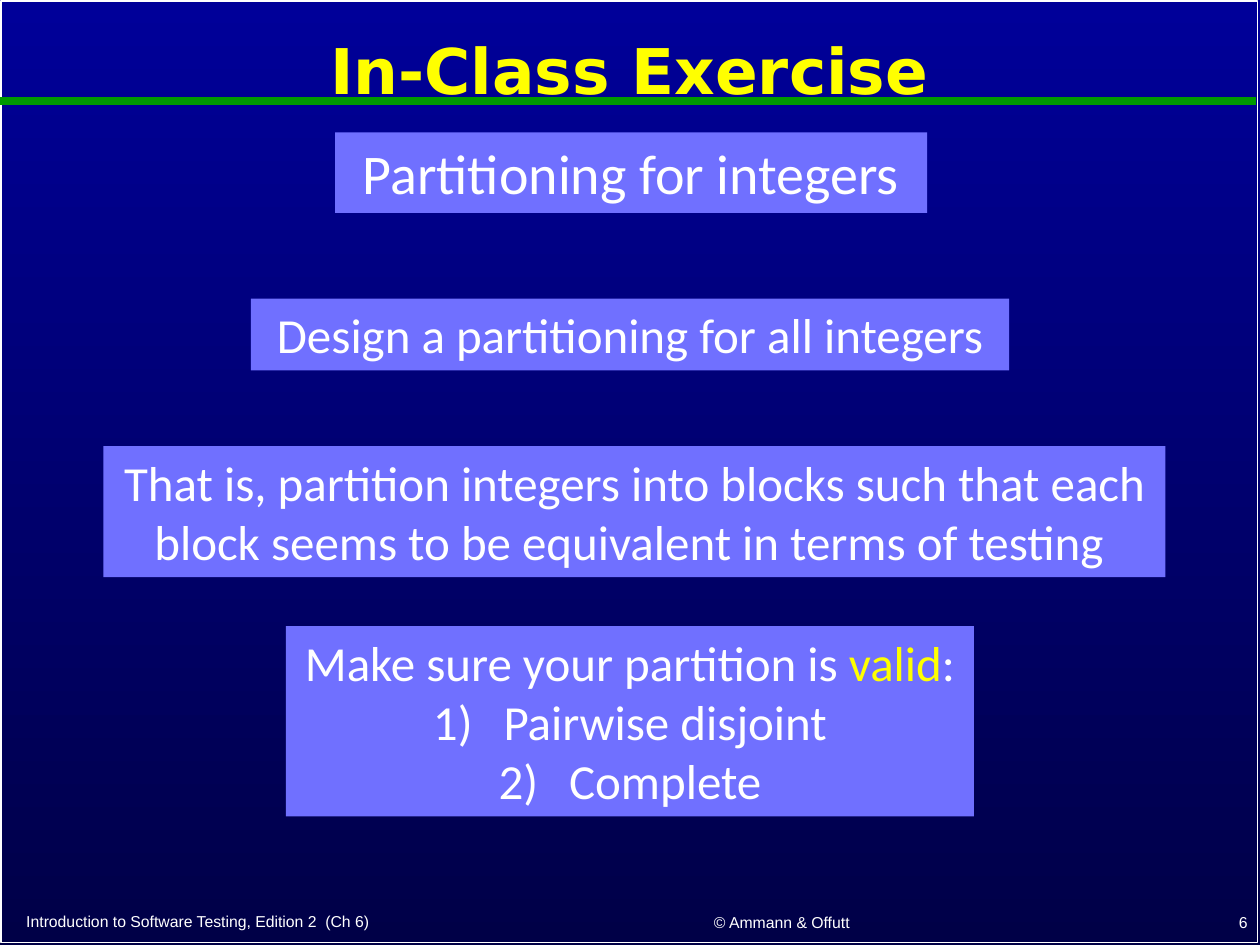
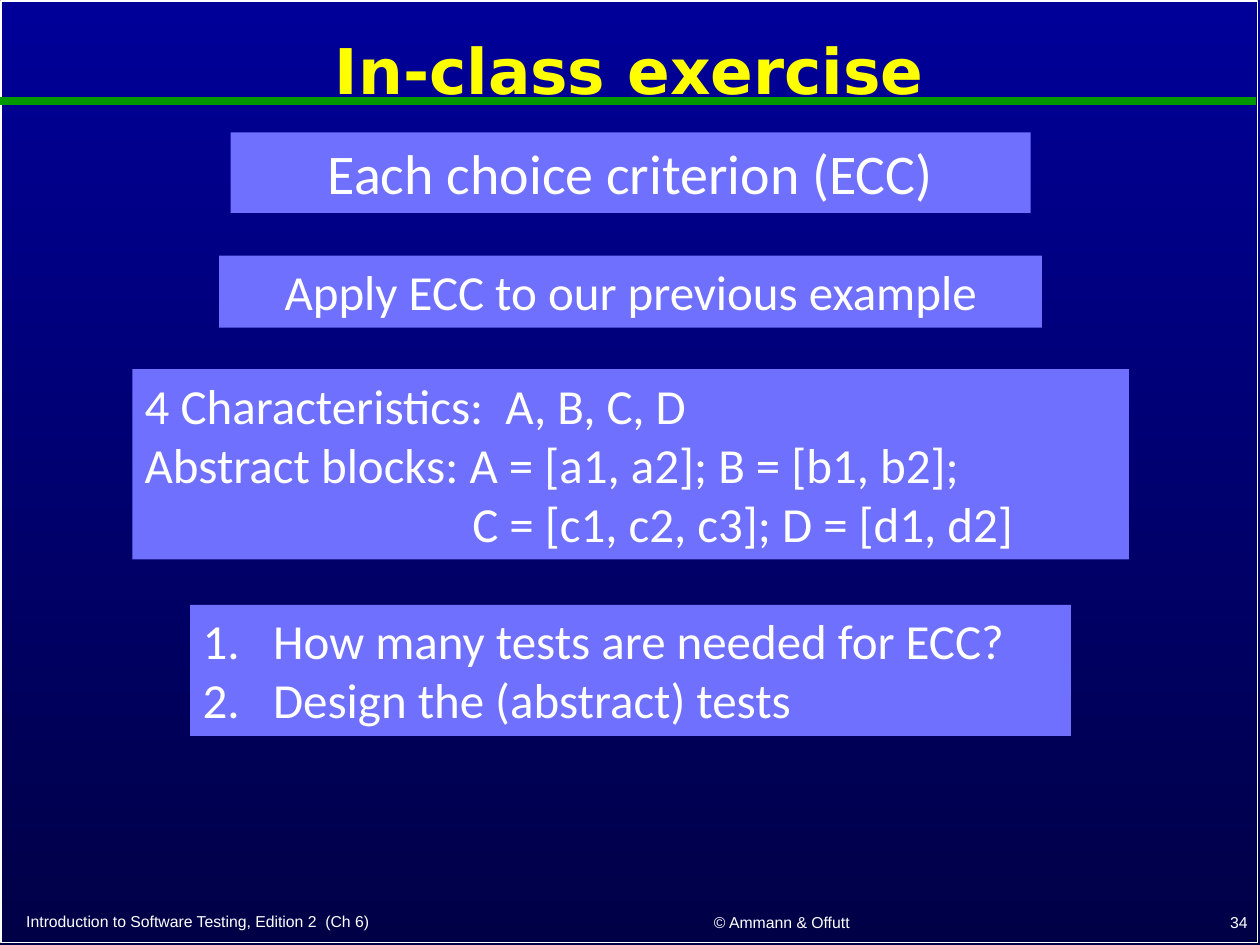
from lxml.etree import SubElement
from pptx import Presentation
from pptx.dml.color import RGBColor
from pptx.enum.shapes import MSO_CONNECTOR, MSO_SHAPE
from pptx.enum.text import MSO_ANCHOR, MSO_AUTO_SIZE, PP_ALIGN
from pptx.oxml.ns import qn
from pptx.util import Inches, Pt

WHITE, YELLOW, GREEN, PANEL = "FFFFFF", "FFFF00", "009900", "7070FF"
NIGHT = ("000099", "000047")
LEFT, CENTER, RIGHT = PP_ALIGN.LEFT, PP_ALIGN.CENTER, PP_ALIGN.RIGHT
HANG = 0.56
FOOTERS = (
    ("Introduction to Software Testing, Edition 2  (Ch 6)",
     (0.11, 7.18, 4.31, 0.26), LEFT),
    ("© Ammann & Offutt", (4.62, 7.17, 3.17, 0.27), CENTER),
)


def paint(color, code):
    color.rgb = RGBColor.from_string(code)


def inches(box):
    return [Inches(side) for side in box]


def write(frame, lines, size=28, font="Calibri", color=WHITE, bold=False,
          align=CENTER, accent=None, anchor=MSO_ANCHOR.TOP):
    """Fill a text frame; the accent word in any line turns yellow."""
    frame.word_wrap = True
    frame.vertical_anchor = anchor
    for i, line in enumerate(lines):
        para = frame.add_paragraph() if i else frame.paragraphs[0]
        para.alignment = align
        for part in line.partition(accent) if accent else (line,):
            if part:
                run = para.add_run()
                run.text = part
                run.font.size, run.font.name = Pt(size), font
                run.font.bold = bold
                paint(run.font.color, YELLOW if part == accent else color)


def indent(para, left, first=0):
    props = para._p.get_or_add_pPr()
    props.set("marL", str(Inches(left)))
    props.set("indent", str(Inches(first)))
    return props


def number(paras, style):
    for para in paras:
        props = indent(para, HANG, -HANG)
        paint_bullet = SubElement(props, qn("a:buFont"))
        paint_bullet.set("typeface", "Calibri")
        SubElement(props, qn("a:buAutoNum")).set("type", style)


def panel(slide, box, *lines, **form):
    shape = slide.shapes.add_shape(MSO_SHAPE.RECTANGLE, *inches(box))
    shape.shadow.inherit = False
    shape.fill.solid()
    paint(shape.fill.fore_color, PANEL)
    shape.line.fill.background()
    frame = shape.text_frame
    write(frame, lines, **form)
    frame.auto_size = MSO_AUTO_SIZE.SHAPE_TO_FIT_TEXT
    return frame.paragraphs


def border(slide, box):
    edge = slide.shapes.add_shape(MSO_SHAPE.RECTANGLE, *inches(box))
    edge.shadow.inherit = False
    edge.fill.background()
    paint(edge.line.color, WHITE)
    edge.line.width = Pt(1)


def rule(slide, left, top, width):
    line = slide.shapes.add_connector(
        MSO_CONNECTOR.STRAIGHT, *inches((left, top, left + width, top)))
    paint(line.line.color, GREEN)
    line.line.width = Pt(4.5)
    SubElement(line._element.spPr, qn("a:effectLst"))


def footer(slide, text, box, align):
    note = slide.shapes.add_textbox(*inches(box))
    write(note.text_frame, [text], size=9, font="Arial", align=align,
          anchor=MSO_ANCHOR.BOTTOM)


def heading(slide, text, box):
    title = slide.shapes.title
    title.left, title.top, title.width, title.height = inches(box)
    write(title.text_frame, [text], size=36, font="DejaVu Sans",
          color=YELLOW, bold=True, anchor=MSO_ANCHOR.MIDDLE)
    title.text_frame.auto_size = MSO_AUTO_SIZE.NONE
    title.text_frame.paragraphs[0].line_spacing = 0.9


def backdrop(master):
    fill = master.background.fill
    fill.gradient()
    fill.gradient_angle = 270
    for stop, code, place in zip(fill.gradient_stops, NIGHT, (0, 1)):
        paint(stop.color, code)
        stop.position = place


def page(deck, title, num):
    """Add a slide with the shared title, border, rule and footers."""
    slide = deck.slides.add_slide(deck.slide_layouts[5])
    heading(slide, title, (0.01, 0.11, 9.97, 0.95))
    border(slide, (0.01, 0.01, 9.97, 7.47))
    rule(slide, 0, 0.8, 9.97)
    for text, box, align in FOOTERS:
        footer(slide, text, box, align)
    footer(slide, str(num), (7.92, 7.16, 2.08, 0.28), RIGHT)
    return slide


def integers(deck):
    slide = page(deck, "In-Class Exercise", 6)
    panel(slide, (2.66, 1.05, 4.7, 0.64), "Partitioning for integers", size=32)
    panel(slide, (1.99, 2.37, 6.02, 0.57),
          "Design a partitioning for all integers")
    panel(slide, (0.82, 3.54, 8.43, 1.04),
          "That is, partition integers into blocks such that each block "
          "seems to be equivalent in terms of testing ")
    paras = panel(slide, (2.27, 4.97, 5.46, 1.51),
                  "Make sure your partition is valid:",
                  "Pairwise disjoint", "Complete", accent="valid")
    number(paras[1:], "arabicParenR")


def choices(deck):
    slide = page(deck, "In-class exercise", 34)
    panel(slide, (1.83, 1.05, 6.35, 0.64), "Each choice criterion (ECC)",
          size=32)
    panel(slide, (1.74, 2.03, 6.53, 0.57), "Apply ECC to our previous example")
    blocks = panel(slide, (1.05, 2.93, 7.91, 1.51),
                   "4 Characteristics:  A, B, C, D",
                   "Abstract blocks: A = [a1, a2]; B = [b1, b2];",
                   "C = [c1, c2, c3]; D = [d1, d2]", align=LEFT)
    indent(blocks[-1], 2.6)
    tasks = panel(slide, (1.51, 4.8, 6.99, 1.04),
                  "How many tests are needed for ECC?",
                  "Design the (abstract) tests", align=LEFT)
    number(tasks, "arabicPeriod")


def main():
    deck = Presentation()
    deck.slide_width, deck.slide_height = Inches(10), Inches(7.5)
    backdrop(deck.slide_master)
    integers(deck)
    choices(deck)
    deck.save("out.pptx")


if __name__ == "__main__":
    main()
